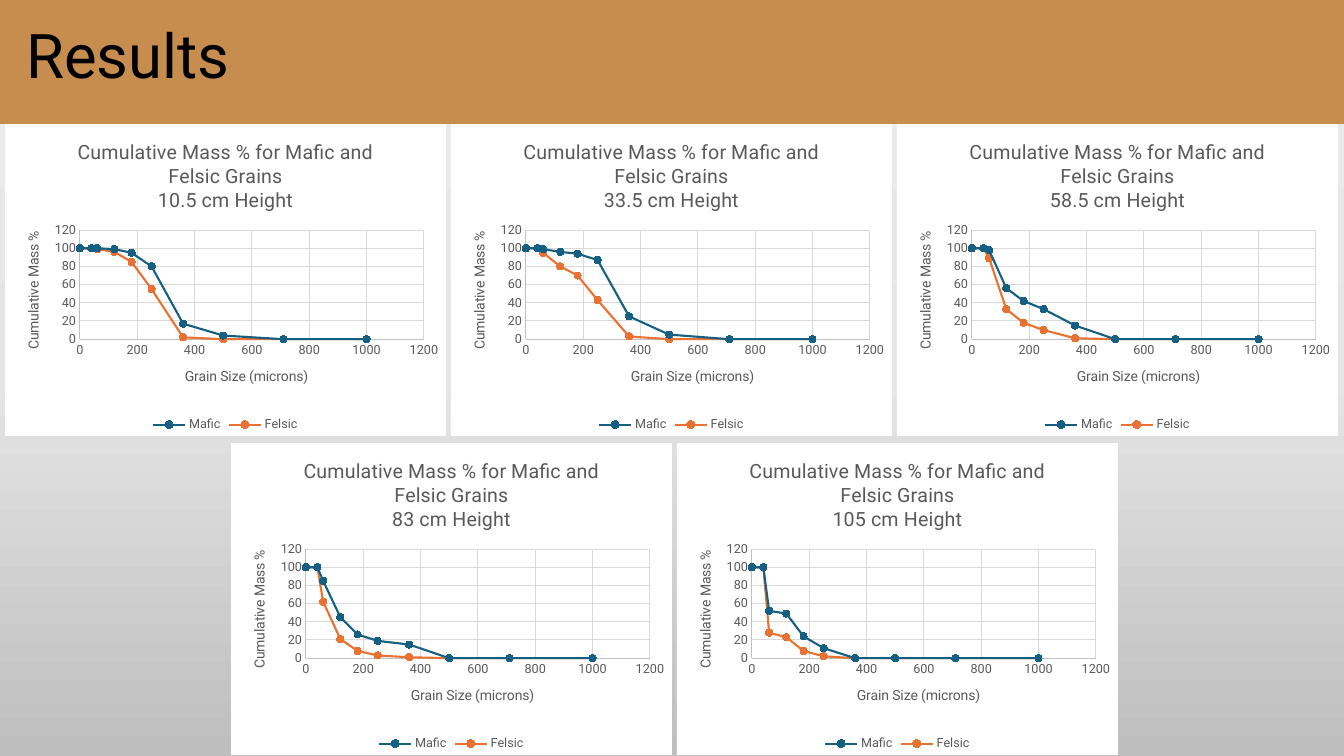
from copy import deepcopy

from pptx import Presentation
from pptx.chart.data import XyChartData
from pptx.dml.color import RGBColor as RGB
from pptx.enum.chart import XL_CHART_TYPE as CT, XL_LEGEND_POSITION as LP
from pptx.enum.chart import XL_MARKER_STYLE as MS, XL_TICK_MARK as TM
from pptx.enum.shapes import MSO_SHAPE as SHAPE
from pptx.enum.text import MSO_ANCHOR as ANCHOR, PP_ALIGN as ALIGN
from pptx.oxml import parse_xml
from pptx.oxml.ns import nsdecls, qn
from pptx.util import Emu, Pt

COLORS = {
    "banner": "C78D4E", "black": "000000", "white": "FFFFFF",
    "text": "595959", "axis": "BFBFBF", "grid": "D9D9D9",
    "Mafic": "156082", "Felsic": "E97132",
}
BACKGROUND = [(0, "ECECEC"), (0.5, "E5E5E5"), (1, "BEBEBE")]
GRAIN_SIZES = [1000, 710, 500, 360, 250, 180, 120, 60, 40, 0]
CHART_W, CHART_H, CHART_STEP = 441, 312, 446

# Height, left, top, then cumulative mass for each series
CHARTS = [
    ("10.5", 5, 124, [0, 0, 4, 17, 80, 95, 99, 100, 100, 100],
     [0, 0, 0, 2, 55, 85, 96, 99, 100, 100]),
    ("33.5", 5 + CHART_STEP, 124, [0, 0, 5, 25, 87, 94, 96, 99, 100, 100],
     [0, 0, 0, 3, 43, 70, 80, 95, 100, 100]),
    ("58.5", 5 + 2 * CHART_STEP, 124, [0, 0, 0, 15, 33, 42, 56, 98, 100, 100],
     [0, 0, 0, 1, 10, 18, 33, 89, 100, 100]),
    ("83", 231, 443, [0, 0, 0, 15, 19, 26, 45, 85, 100, 100],
     [0, 0, 0, 1, 3, 8, 21, 62, 100, 100]),
    ("105", 231 + CHART_STEP, 443, [0, 0, 0, 0, 11, 24, 49, 52, 100, 100],
     [0, 0, 0, 0, 2, 8, 23, 28, 100, 100]),
]


def px(*lengths):
    return [Emu(round(n * 914400 / 100.8)) for n in lengths]


def set_font(font, size, color):
    values = {"name": "Roboto", "size": Pt(size), "bold": False}
    for key, value in values.items():
        setattr(font, key, value)
    font.color.rgb = RGB.from_string(COLORS[color])


prs = Presentation()
prs.slide_width, prs.slide_height = px(1344, 756)
s = prs.slides.add_slide(prs.slide_layouts[5])

# Background gradient
fill = s.background.fill
fill.gradient()
fill.gradient_angle = 270
first_stop = fill.gradient_stops[0]._gs
first_stop.addnext(deepcopy(first_stop))
for stop, (position, color) in zip(fill.gradient_stops, BACKGROUND):
    stop.position = position
    stop.color.rgb = RGB.from_string(color)

# Banner, placed behind the title
banner = s.shapes.add_shape(SHAPE.RECTANGLE, *px(-9, -6, 1368, 130))
banner.shadow.inherit = False
banner.fill.solid()
banner.fill.fore_color.rgb = RGB.from_string(COLORS["banner"])
banner.line.fill.background()
title = s.shapes.title
title._element.addprevious(banner._element)

# Title
title.left, title.top, title.width, title.height = px(16, -6, 1159, 130)
tf = title.text_frame
tf.text = "Results"
tf.vertical_anchor = ANCHOR.MIDDLE
p = tf.paragraphs[0]
p.alignment = ALIGN.LEFT
p.line_spacing = 0.9
set_font(p.runs[0].font, 44, "black")

# Charts
for height, left, top, mafic, felsic in CHARTS:
    data = XyChartData()
    for name, masses in (("Mafic", mafic), ("Felsic", felsic)):
        series = data.add_series(name)
        for size, mass in zip(GRAIN_SIZES, masses):
            series.add_data_point(size, mass)
    frame = s.shapes.add_chart(CT.XY_SCATTER_SMOOTH,
                               *px(left, top, CHART_W, CHART_H), data)
    chart = frame.chart
    set_font(chart.font, 10, "black")
    chart.plots[0].vary_by_categories = False

    # Chart title
    tf = chart.chart_title.text_frame
    tf.text = f"Cumulative Mass % for Mafic and Felsic Grains\n{height} cm Height"
    for p in tf.paragraphs:
        set_font(p.runs[0].font, 14, "text")

    # Legend
    chart.has_legend = True
    chart.legend.position = LP.BOTTOM
    chart.legend.include_in_layout = False
    set_font(chart.legend.font, 9, "text")

    # Axes
    for axis, label, top_value, unit in (
            (chart.category_axis, "Grain Size (microns)", 1200, 200),
            (chart.value_axis, "Cumulative Mass %", 120, 20)):
        values = {"minimum_scale": 0, "maximum_scale": top_value,
                  "major_unit": unit, "has_major_gridlines": True,
                  "major_tick_mark": TM.NONE, "minor_tick_mark": TM.NONE}
        for key, value in values.items():
            setattr(axis, key, value)
        set_font(axis.tick_labels.font, 9, "text")
        axis.axis_title.text_frame.text = label
        set_font(axis.axis_title.text_frame.paragraphs[0].runs[0].font, 10, "text")
        for line, color in ((axis.format.line, "axis"),
                            (axis.major_gridlines.format.line, "grid")):
            line.width = Pt(0.75)
            line.color.rgb = RGB.from_string(COLORS[color])

    # Series
    for series in chart.plots[0].series:
        color = RGB.from_string(COLORS[series.name])
        series.smooth = True
        series.format.line.width = Pt(1.5)
        series.format.line.color.rgb = color
        series.marker.style = MS.CIRCLE
        series.marker.size = 5
        series.marker.format.fill.solid()
        series.marker.format.fill.fore_color.rgb = color
        series.marker.format.line.color.rgb = color

    # Plot area position and white chart area
    space = chart._chartSpace
    plot_area = space.find(".//" + qn("c:plotArea"))
    for old in plot_area.findall(qn("c:layout")):
        plot_area.remove(old)
    box = {"x": 0.17, "y": 0.34, "w": 0.78, "h": 0.35}
    plot_area.insert(0, parse_xml(
        f'<c:layout {nsdecls("c")}><c:manualLayout><c:layoutTarget val="inner"/>'
        '<c:xMode val="edge"/><c:yMode val="edge"/>'
        + "".join(f'<c:{key} val="{value}"/>' for key, value in box.items())
        + "</c:manualLayout></c:layout>"))
    space.find(qn("c:chart")).addnext(parse_xml(
        f'<c:spPr {nsdecls("c", "a")}><a:solidFill><a:srgbClr val="{COLORS["white"]}"/>'
        "</a:solidFill><a:ln><a:noFill/></a:ln></c:spPr>"))

prs.save("out.pptx")
